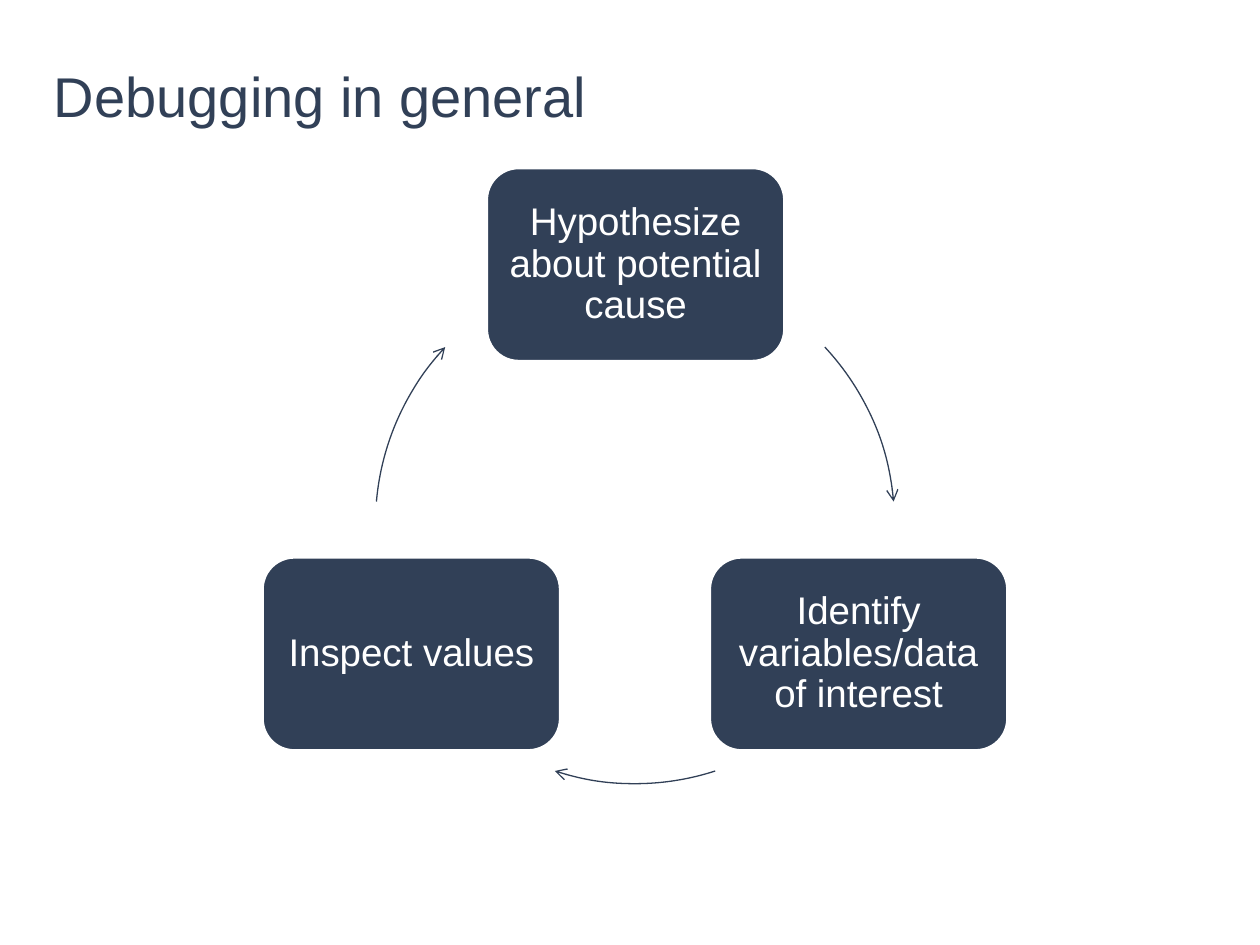
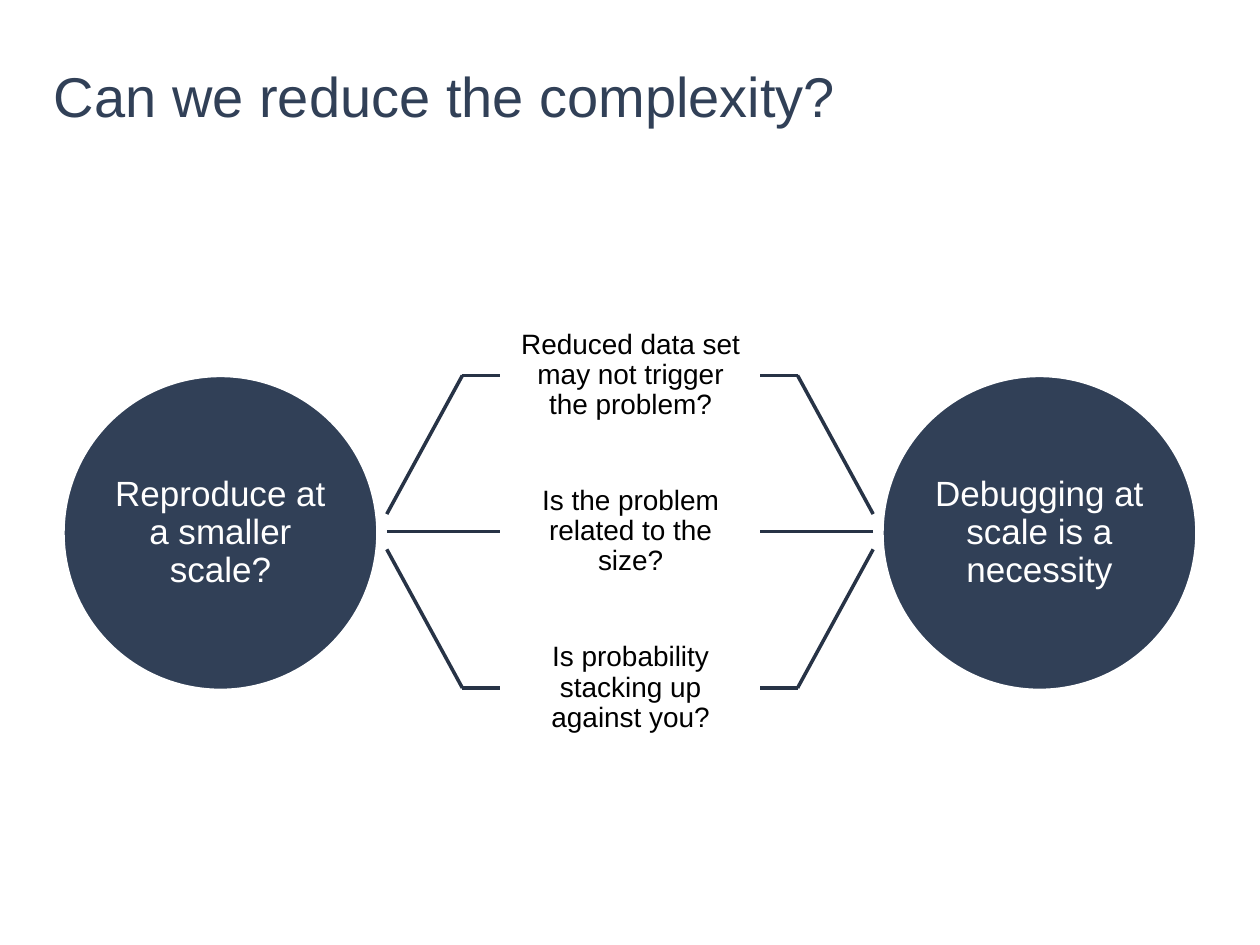
from lxml import etree
from pptx import Presentation
from pptx.dml.color import RGBColor
from pptx.enum.shapes import MSO_CONNECTOR, MSO_SHAPE
from pptx.enum.text import MSO_ANCHOR, PP_ALIGN
from pptx.oxml.ns import qn
from pptx.util import Pt

PX = 9144  # EMU in one px, 100 px to the inch
SLIDE_WIDTH, SLIDE_HEIGHT = 1000, 750
NAVY = RGBColor(0x31, 0x40, 0x57)
DARK_NAVY = RGBColor(0x27, 0x33, 0x46)
WHITE = RGBColor(0xFF, 0xFF, 0xFF)
BLACK = RGBColor(0x00, 0x00, 0x00)
FONT = "Arial"

STRAIGHT = MSO_CONNECTOR.STRAIGHT
ROUNDED, OVAL, ARC = MSO_SHAPE.ROUNDED_RECTANGLE, MSO_SHAPE.OVAL, MSO_SHAPE.ARC
MIDDLE = MSO_ANCHOR.MIDDLE
LEFT, CENTER = PP_ALIGN.LEFT, PP_ALIGN.CENTER

TITLE_FORMAT = {"size": Pt(32), "color": NAVY}
STEP_FORMAT = {"size": Pt(22), "color": WHITE}
CIRCLE_FORMAT = {"size": Pt(20), "color": WHITE}
QUESTION_FORMAT = {"size": Pt(16), "color": BLACK}


class Deck:
    def __init__(self):
        self.presentation = Presentation()
        self.presentation.slide_width = SLIDE_WIDTH * PX
        self.presentation.slide_height = SLIDE_HEIGHT * PX
        self.slide = None

    def add_slide(self, title):
        layout = self.presentation.slide_layouts[6]
        self.slide = self.presentation.slides.add_slide(layout)
        self.text(title, (33, 42, 942, 67), TITLE_FORMAT, 10, LEFT, 1.0)

    def set_words(self, shape, words, text_format, inset, align=CENTER, spacing=0.9):
        frame = shape.text_frame
        frame.word_wrap = True
        frame.vertical_anchor = MIDDLE
        for side in ("left", "right", "top", "bottom"):
            setattr(frame, f"margin_{side}", inset * PX)
        paragraph = frame.paragraphs[0]
        paragraph.text = words
        paragraph.alignment = align
        paragraph.line_spacing = spacing
        font = paragraph.font
        for name, value in {"name": FONT, "size": text_format["size"]}.items():
            setattr(font, name, value)
        font.color.rgb = text_format["color"]

    def text(self, words, box, text_format, inset, align=CENTER, spacing=0.9):
        shape = self.slide.shapes.add_textbox(*(value * PX for value in box))
        self.set_words(shape, words, text_format, inset, align, spacing)

    def node(self, kind, words, box, text_format, inset):
        """Add a navy shape with a white outline and centred words."""
        shape = self.slide.shapes.add_shape(kind, *(value * PX for value in box))
        shape.shadow.inherit = False
        shape.fill.solid()
        shape.fill.fore_color.rgb = NAVY
        shape.line.color.rgb = WHITE
        shape.line.width = Pt(2)
        self.set_words(shape, words, text_format, inset)

    def arc_arrow(self, center_x, center_y, radius, start, end):
        """Add a clockwise arc with an arrowhead; angles are degrees from the right."""
        box = (center_x - radius, center_y - radius, 2 * radius, 2 * radius)
        shape = self.slide.shapes.add_shape(ARC, *(value * PX for value in box))
        shape.shadow.inherit = False
        for index, angle in enumerate((start, end)):
            shape.adjustments[index] = angle * 0.6
        shape.fill.background()
        shape.line.color.rgb = NAVY
        shape.line.width = Pt(0.75)
        outline = shape._element.spPr.find(qn("a:ln"))
        etree.SubElement(outline, qn("a:tailEnd"), type="arrow")

    def line(self, start, end):
        points = (value * PX for value in (*start, *end))
        connector = self.slide.shapes.add_connector(STRAIGHT, *points)
        connector.line.color.rgb = DARK_NAVY
        connector.line.width = Pt(2)
        etree.SubElement(connector._element.spPr, qn("a:effectLst"))


def build_cycle(deck):
    deck.add_slide("Debugging in general")
    width, height = 237, 154
    steps = [
        ("Hypothesize about potential cause", 386, 133, 317, 355),
        ("Identify variables/data of interest", 563, 442, 72, 108),
        ("Inspect values", 208, 442, 185, 223),
    ]
    for words, left, top, arc_start, arc_end in steps:
        deck.node(ROUNDED, words, (left, top, width, height), STEP_FORMAT, 9)
        deck.arc_arrow(504, 416, 206, arc_start, arc_end)


def build_questions(deck):
    deck.add_slide("Can we reduce the complexity?")
    diameter, margin, middle = 250, 50, 422
    questions = [
        "Reduced data set may not trigger the problem?",
        "Is the problem related to the size?",
        "Is probability stacking up against you?",
    ]
    circles = [
        ("Reproduce at a smaller scale?", margin),
        ("Debugging at scale is a necessity", SLIDE_WIDTH - margin - diameter),
    ]
    for words, left in circles:
        box = (left, 298, diameter, diameter)
        deck.node(OVAL, words, box, CIRCLE_FORMAT, 0)

    for row, question in enumerate(questions, start=-1):
        center = middle + 124 * row
        deck.text(question, (397, center - 62, 207, 124), QUESTION_FORMAT, 12)
        bracket = [(307, middle + 14 * row), (367, center), (397, center)]
        mirrored = [(SLIDE_WIDTH - x, y) for x, y in bracket]
        for points in (bracket, mirrored):
            for start, end in zip(points, points[1:]):
                deck.line(start, end)


def main():
    deck = Deck()
    build_cycle(deck)
    build_questions(deck)
    deck.presentation.save("out.pptx")


if __name__ == "__main__":
    main()
